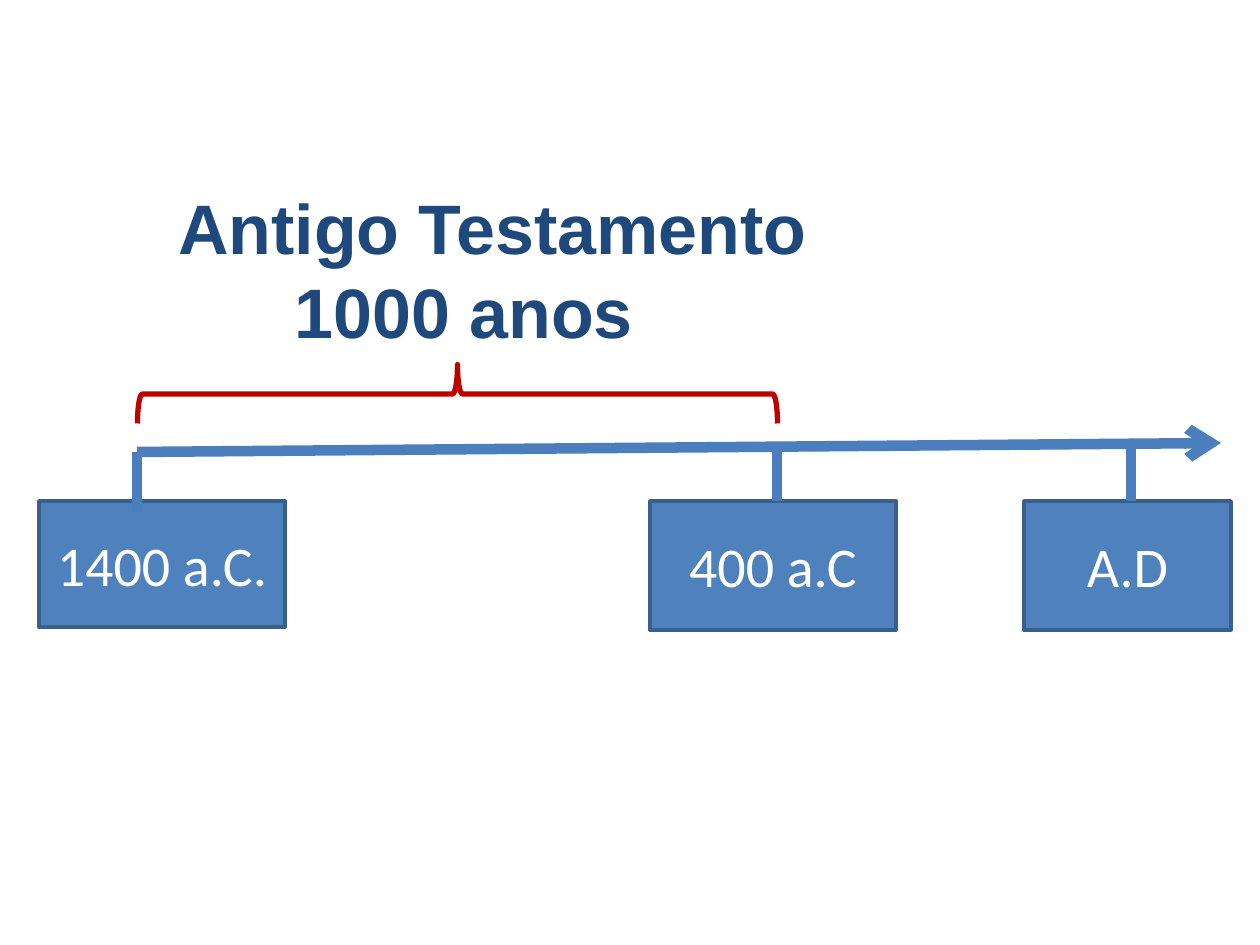
from dataclasses import dataclass

from lxml import etree
from pptx import Presentation
from pptx.dml.color import RGBColor
from pptx.enum.shapes import MSO_CONNECTOR, MSO_SHAPE
from pptx.enum.text import MSO_ANCHOR, MSO_AUTO_SIZE, PP_ALIGN
from pptx.oxml.ns import qn
from pptx.util import Emu, Pt

RECTANGLE, BRACE = MSO_SHAPE.RECTANGLE, MSO_SHAPE.LEFT_BRACE
STRAIGHT = MSO_CONNECTOR.STRAIGHT
LEFT, CENTER = PP_ALIGN.LEFT, PP_ALIGN.CENTER
MIDDLE = MSO_ANCHOR.MIDDLE
GROW = MSO_AUTO_SIZE.SHAPE_TO_FIT_TEXT
PX = 914400 / 126


@dataclass(frozen=True)
class Theme:
    white: RGBColor = RGBColor.from_string("FFFFFF")
    navy: RGBColor = RGBColor.from_string("1F497D")
    box: RGBColor = RGBColor.from_string("4F81BD")
    border: RGBColor = RGBColor.from_string("3A5F8C")
    axis: RGBColor = RGBColor.from_string("4B7EBC")
    brace: RGBColor = RGBColor.from_string("C00000")
    title_font: str = "Arial"
    label_font: str = "Calibri"
    title_size: int = 40
    label_size: int = 32


theme = Theme()


def px(*lengths):
    return [Emu(round(length * PX)) for length in lengths]


def write(paragraph, text, *, font, size, color, bold=False, align=LEFT, indent=0):
    if indent:
        paragraph._p.get_or_add_pPr().set("marL", str(px(indent)[0]))
    paragraph.alignment = align
    run = paragraph.add_run()
    run.text = text
    run.font.name, run.font.size, run.font.bold = font, Pt(size), bold
    run.font.color.rgb = color


prs = Presentation()
prs.slide_width, prs.slide_height = px(1260, 945)
slide = prs.slides.add_slide(prs.slide_layouts[6])
shapes = slide.shapes

# Time axis
axis = shapes.add_connector(STRAIGHT, *px(137, 452, 1221, 443))
strokes = [axis]

# Dates: label, box left, width, height, then tick x, top, bottom
dates = [
    ("1400 a.C.", 39, 246, 126, 137, 452, 512),
    ("400 a.C", 650, 246, 129, 777, 443, 501),
    ("A.D", 1024, 207, 129, 1131, 443, 501),
]
for label, left, width, height, tick_x, tick_top, tick_bottom in dates:
    date_box = shapes.add_shape(RECTANGLE, *px(left, 501, width, height))
    date_box.shadow.inherit = False
    date_box.fill.solid()
    date_box.fill.fore_color.rgb = theme.box
    date_box.line.color.rgb = theme.border
    date_box.line.width = Pt(2)
    date_box.text_frame.vertical_anchor = MIDDLE
    date_box.text_frame.word_wrap = True
    write(date_box.text_frame.paragraphs[0], label, font=theme.label_font,
          size=theme.label_size, color=theme.white, align=CENTER)
    strokes.append(shapes.add_connector(
        STRAIGHT, *px(tick_x, tick_top, tick_x, tick_bottom)))

# Shared stroke of axis and ticks; the arrowhead belongs to the axis
for stroke in strokes:
    stroke.line.color.rgb = theme.axis
    stroke.line.width = Pt(6)
    etree.SubElement(stroke._element.spPr, qn("a:effectLst"))
etree.SubElement(axis.line._get_or_add_ln(), qn("a:tailEnd"), type="arrow")

# Brace over the Old Testament period
period = shapes.add_shape(BRACE, *px(428, 74, 59, 640))
period.rotation = 90
period.shadow.inherit = False
period.fill.solid()
period.fill.fore_color.rgb = theme.white
period.line.color.rgb = theme.brace
period.line.width = Pt(3)

# Period title
title = shapes.add_textbox(*px(88, 178, 738, 183)).text_frame
title.word_wrap = True
title.auto_size = GROW
title_lines = [("Antigo Testamento", 78), ("1000 anos", 194)]
for number, (text, indent) in enumerate(title_lines):
    paragraph = title.add_paragraph() if number else title.paragraphs[0]
    write(paragraph, text, font=theme.title_font, size=theme.title_size,
          color=theme.navy, bold=True, indent=indent)

prs.save("out.pptx")
